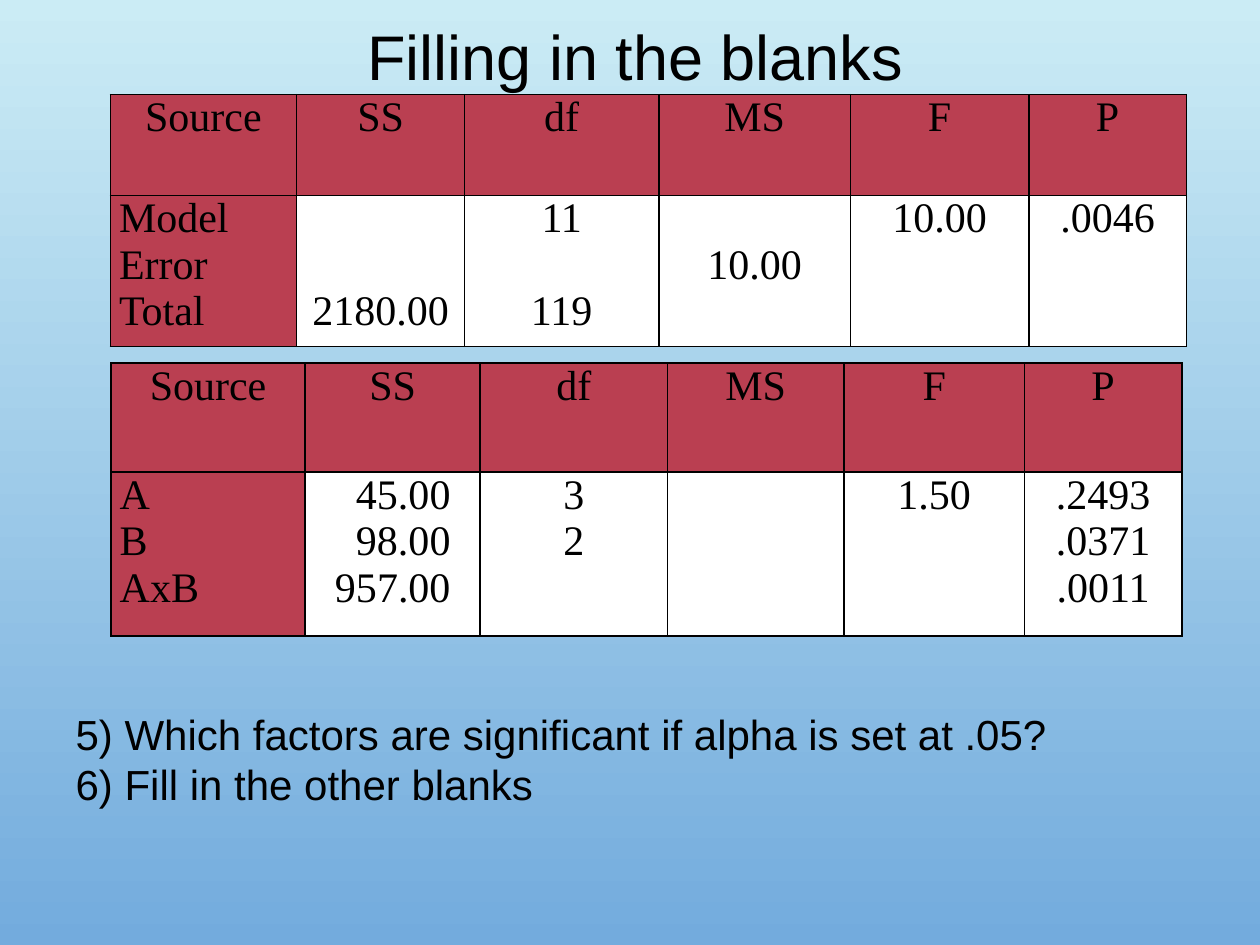
import pptx
import pptx.dml.color
import pptx.enum.text
import pptx.oxml
import pptx.oxml.ns
import pptx.util

Pt = pptx.util.Pt
RGBColor = pptx.dml.color.RGBColor
Align = pptx.enum.text.PP_ALIGN
Anchor = pptx.enum.text.MSO_ANCHOR

BLACK = RGBColor(0x00, 0x00, 0x00)
WHITE = RGBColor(0xFF, 0xFF, 0xFF)
RED = RGBColor(0xBA, 0x3F, 0x51)
SKY_TOP = RGBColor(0xCB, 0xEC, 0xF5)
SKY_BOTTOM = RGBColor(0x73, 0xAB, 0xDD)

TABLE_LINE = 26.6  # height of one 24 pt line in the tables
CELL_MARGIN = 5
HEADINGS = ["Source", "SS", "df", "MS", "F", "P"]

# Each column lists its lines from the top; an empty string leaves a line free.
MODEL_COLUMNS = [
    ["Model", "Error", "Total"],
    ["", "", "2180.00"],
    ["11", "", "119"],
    ["", "10.00"],
    ["10.00"],
    [".0046"],
]
FACTOR_COLUMNS = [
    ["A", "B", "AxB"],
    ["45.00", "98.00", "957.00"],
    ["3", "2"],
    [],
    ["1.50"],
    [".2493", ".0371", ".0011"],
]
QUESTIONS = [
    "5) Which factors are significant if alpha is set at .05?",
    "6) Fill in the other blanks",
]


def place(shape, box):
    shape.left, shape.top, shape.width, shape.height = map(Pt, box)


def style_font(para, name, size):
    para.font.name = name
    para.font.size = Pt(size)
    para.font.color.rgb = BLACK


def paint_background(page):
    fill = page.background.fill
    fill.gradient()
    fill.gradient_angle = 270
    for stop, color, position in zip(fill.gradient_stops, (SKY_TOP, SKY_BOTTOM), (0, 1)):
        stop.color.rgb = color
        stop.position = position


def add_title(page, box, text):
    title = page.shapes.title
    place(title, box)
    frame = title.text_frame
    frame.text = text
    frame.vertical_anchor = Anchor.MIDDLE
    para = frame.paragraphs[0]
    para.alignment = Align.CENTER
    para.line_spacing = 0.9
    style_font(para, "Arial", 36)


def add_questions(page, box):
    body = page.placeholders[1]
    place(body, box)
    frame = body.text_frame
    frame.text = "\n".join(QUESTIONS)
    frame.auto_size = pptx.enum.text.MSO_AUTO_SIZE.SHAPE_TO_FIT_TEXT
    for para in frame.paragraphs:
        properties = para._p.get_or_add_pPr()
        properties.set("marL", "0")
        properties.set("indent", "0")
        pptx.oxml.ns  # namespace helpers
        properties.append(pptx.oxml.parse_xml(
            f"<a:buNone {pptx.oxml.ns.nsdecls('a')}/>"))
        para.space_before = Pt(0)
        style_font(para, "Arial", 24)


def outline_cell(cell):
    properties = cell._tc.get_or_add_tcPr()
    for side in ("lnL", "lnR", "lnT", "lnB"):
        properties.append(pptx.oxml.parse_xml(
            f'<a:{side} {pptx.oxml.ns.nsdecls("a")} w="{Pt(1)}"><a:solidFill>'
            f'<a:srgbClr val="{BLACK}"/></a:solidFill></a:{side}>'))


def fill_cell(cell, lines, color, alignment, right_margin=CELL_MARGIN):
    """Write the lines, turning empty ones into a top margin or paragraph spacing."""
    outline_cell(cell)
    cell.fill.solid()
    cell.fill.fore_color.rgb = color
    cell.margin_left, cell.margin_right = Pt(CELL_MARGIN), Pt(right_margin)
    cell.margin_top = cell.margin_bottom = 0
    used = [(row, text) for row, text in enumerate(lines) if text]
    if not used:
        return
    cell.margin_top = Pt(used[0][0] * TABLE_LINE)
    cell.text = "\n".join(text for _, text in used)
    previous = used[0][0] - 1
    for para, (row, _) in zip(cell.text_frame.paragraphs, used):
        para.alignment = alignment
        para.space_before = Pt((row - previous - 1) * TABLE_LINE)
        style_font(para, "Times New Roman", 24)
        previous = row


def add_anova_table(page, box, widths, heights, columns, right_margins):
    """Columns named in right_margins are right-aligned with that margin."""
    table = page.shapes.add_table(2, len(HEADINGS), *map(Pt, box)).table
    table.first_row = table.horz_banding = False
    for row, height in zip(table.rows, heights):
        row.height = Pt(height)
    for index, (heading, lines) in enumerate(zip(HEADINGS, columns)):
        table.columns[index].width = Pt(widths[index])
        fill_cell(table.cell(0, index), [heading], RED, Align.CENTER)
        cell = table.cell(1, index)
        if index == 0:
            fill_cell(cell, lines, RED, Align.LEFT)
        elif heading in right_margins:
            fill_cell(cell, lines, WHITE, Align.RIGHT, right_margins[heading])
        else:
            fill_cell(cell, lines, WHITE, Align.CENTER)


def main():
    deck = pptx.Presentation()
    deck.slide_width, deck.slide_height = Pt(720), Pt(540)
    page = deck.slides.add_slide(deck.slide_layouts[1])
    paint_background(page)
    add_title(page, (39, 12, 648, 45), "Filling in the blanks")
    add_anova_table(page, (63, 54, 615, 144), (106.5, 96, 111, 109.5, 102, 90),
                    (57.6, 86.4), MODEL_COLUMNS, {})
    add_anova_table(page, (63.4, 207.4, 612, 156), (111, 100, 107, 101, 103, 90),
                    (62.4, 93.6), FACTOR_COLUMNS, {"SS": 17})
    add_questions(page, (36, 401, 628, 65.5))
    deck.save("out.pptx")


if __name__ == "__main__":
    main()
